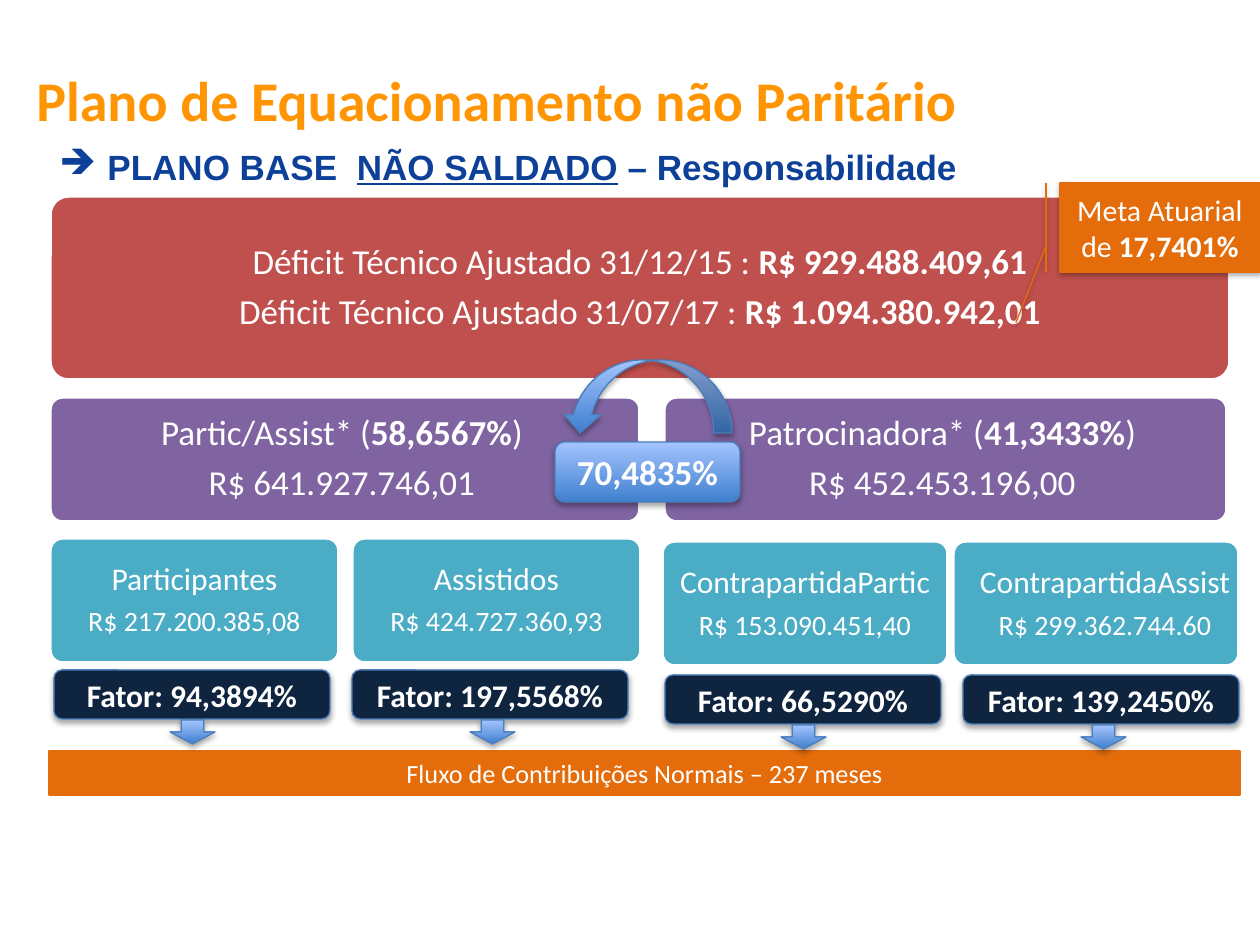
from lxml import etree
from pptx import Presentation
from pptx.dml.color import RGBColor
from pptx.enum.shapes import MSO_SHAPE as Preset
from pptx.enum.text import MSO_ANCHOR as Anchor, PP_ALIGN as Align
from pptx.oxml.ns import qn
from pptx.util import Pt

PX = 914400 / 126
WHITE = RGBColor(0xFF, 0xFF, 0xFF)
RED = RGBColor(0xC0, 0x50, 0x4D)
PURPLE = RGBColor(0x80, 0x64, 0xA2)
TEAL = RGBColor(0x4B, 0xAC, 0xC6)
ORANGE = RGBColor(0xE4, 0x6C, 0x0A)
NAVY = RGBColor(0x0F, 0x24, 0x3E)
EDGE = RGBColor(0x4B, 0x7E, 0xBC)
DEEP_BLUE = RGBColor(0x3F, 0x80, 0xCE)
LIGHT_BLUE = RGBColor(0xA4, 0xC4, 0xFF)
TITLE_COLOR = RGBColor(0xFF, 0x95, 0x02)
SUBTITLE_COLOR = RGBColor(0x0D, 0x40, 0x98)

deck = Presentation()
deck.slide_width = round(1260 * PX)
deck.slide_height = round(945 * PX)
page = deck.slides.add_slide(deck.slide_layouts[6])


def add_box(preset, area, fill, line, width=0.75, shadow=True):
    """Add a preset shape; a fill of None gives the blue gradient."""
    box = page.shapes.add_shape(preset, *[round(v * PX) for v in area])
    if fill is None:
        box.fill.gradient()
        box.fill.gradient_angle = 90
        for stop, color, position in zip(box.fill.gradient_stops, (DEEP_BLUE, LIGHT_BLUE), (0, 1)):
            stop.color.rgb = color
            stop.position = position
    else:
        box.fill.solid()
        box.fill.fore_color.rgb = fill
    box.line.color.rgb = line
    box.line.width = Pt(width)
    if not shadow:  # the theme supplies the soft shadow otherwise
        box.shadow.inherit = False
    return box


def write(box, lines, color=WHITE, font="Calibri", align=Align.CENTER, spaced=False):
    """Write lines made of (text, size, bold) runs."""
    frame = box.text_frame
    frame.word_wrap = True
    frame.vertical_anchor = Anchor.MIDDLE
    for number, line in enumerate(lines):
        para = frame.add_paragraph() if number else frame.paragraphs[0]
        para.alignment = align
        if spaced:
            para.line_spacing = 0.9
            para.space_after = Pt(0.35 * line[0][1])
        for text, size, bold in line:
            span = para.add_run()
            span.text = text
            span.font.name = font
            span.font.size = Pt(size)
            span.font.bold = bold
            span.font.color.rgb = color
    return frame


# Deficit, the two shares and the four parts: area, fill, insets, lines
cards = [
    ((50, 196, 1180, 184), RED, (10, 10), [
        [("Déficit Técnico Ajustado 31/12/15 : ", 20, False), ("R$ 929.488.409,61", 20, True)],
        [("Déficit Técnico Ajustado 31/07/17 : ", 20, False), ("R$ 1.094.380.942,01", 20, True)]]),
]
for left, width, name, share, amount in [
    (50, 590, "Partic/Assist* (", "58,6567%", "R$ 641.927.746,01"),
    (664, 563, "Patrocinadora* (", "41,3433%", "R$ 452.453.196,00"),
]:
    cards.append(((left, 397, width, 125), PURPLE, (10, 16), [
        [(name, 20, False), (share, 20, True), (")", 20, False)], [(amount, 20, False)]]))
for left, top, width, insets, name, amount in [
    (50, 538, 289, (9, 9), "Participantes", "R$ 217.200.385,08"),
    (352, 538, 289, (9, 9), "Assistidos", "R$ 424.727.360,93"),
    (662, 541, 286, (12, 12), "ContrapartidaPartic", "R$ 153.090.451,40"),
    (953, 541, 286, (21, 3), "ContrapartidaAssist", "R$ 299.362.744.60"),
]:
    cards.append(((left, top, width, 125), TEAL, insets,
                  [[(name, 18, False)], [(amount, 16, False)]]))

for area, fill, insets, lines in cards:
    card = add_box(Preset.ROUNDED_RECTANGLE, area, fill, WHITE, 2, shadow=False)
    card.adjustments[0] = 0.1
    frame = write(card, lines, spaced=True)
    frame.margin_left, frame.margin_right = [round(v * PX) for v in insets]
    frame.margin_top = frame.margin_bottom = round(10 * PX)

# Title
title = page.shapes.add_textbox(*[round(v * PX) for v in (24, 42, 1081, 115)])
write(title, [[("Plano de Equacionamento não Paritário", 32, True)]], TITLE_COLOR, align=Align.LEFT)

# Subtitle with arrow bullet
subtitle = page.shapes.add_textbox(*[round(v * PX) for v in (47, 139, 1251, 55)])
frame = write(subtitle, [[("PLANO BASE", 20, True), (" ", 20, True), ("NÃO SALDADO", 20, True),
                          (" – Responsabilidade", 20, True)]], SUBTITLE_COLOR, "Arial", Align.LEFT)
para = frame.paragraphs[0]
para.runs[1].font._element.set("spc", "556")  # widens the gap between the words
para.runs[2].font.underline = True
properties = para._p.get_or_add_pPr()
properties.set("marL", str(round(48 * PX)))
properties.set("indent", str(round(-48 * PX)))
etree.SubElement(properties, qn("a:buChar")).set("char", "➔")

# Actuarial target callout
callout = add_box(Preset.LINE_CALLOUT_1_BORDER_AND_ACCENT_BAR, (1060, 183, 200, 89), ORANGE, ORANGE)
for index, value in enumerate((0.71, -0.07, 1.57, -0.22)):
    callout.adjustments[index] = value
write(callout, [[("Meta Atuarial de ", 17, False), ("17,7401%", 17, True)]])

# Contribution flow bar
flow = add_box(Preset.RECTANGLE, (49, 751, 1191, 44), ORANGE, ORANGE, shadow=False)
write(flow, [[("Fluxo de Contribuições Normais – 237 meses", 15, False)]])

# Factors, each with an arrow down to the bar
for left, top, arrow_left, value in [
    (54, 670, 170, "94,3894%"),
    (352, 670, 470, "197,5568%"),
    (665, 675, 781, "66,5290%"),
    (963, 675, 1081, "139,2450%"),
]:
    factor = add_box(Preset.ROUNDED_RECTANGLE, (left, top, 276, 49), NAVY, EDGE)
    write(factor, [[(f"Fator: {value}", 18, True)]])
    add_box(Preset.DOWN_ARROW, (arrow_left, top + 50, 45, 24), None, EDGE)

# Ratio between the two shares
curve = add_box(Preset.CURVED_DOWN_ARROW, (562, 360, 170, 73), None, EDGE)
curve.rotation = 180
curve._element.spPr.find(qn("a:xfrm")).set("flipV", "1")
ratio = add_box(Preset.ROUNDED_RECTANGLE, (555, 442, 185, 60), None, EDGE)
write(ratio, [[("70,4835%", 20, True)]])

deck.save("out.pptx")
